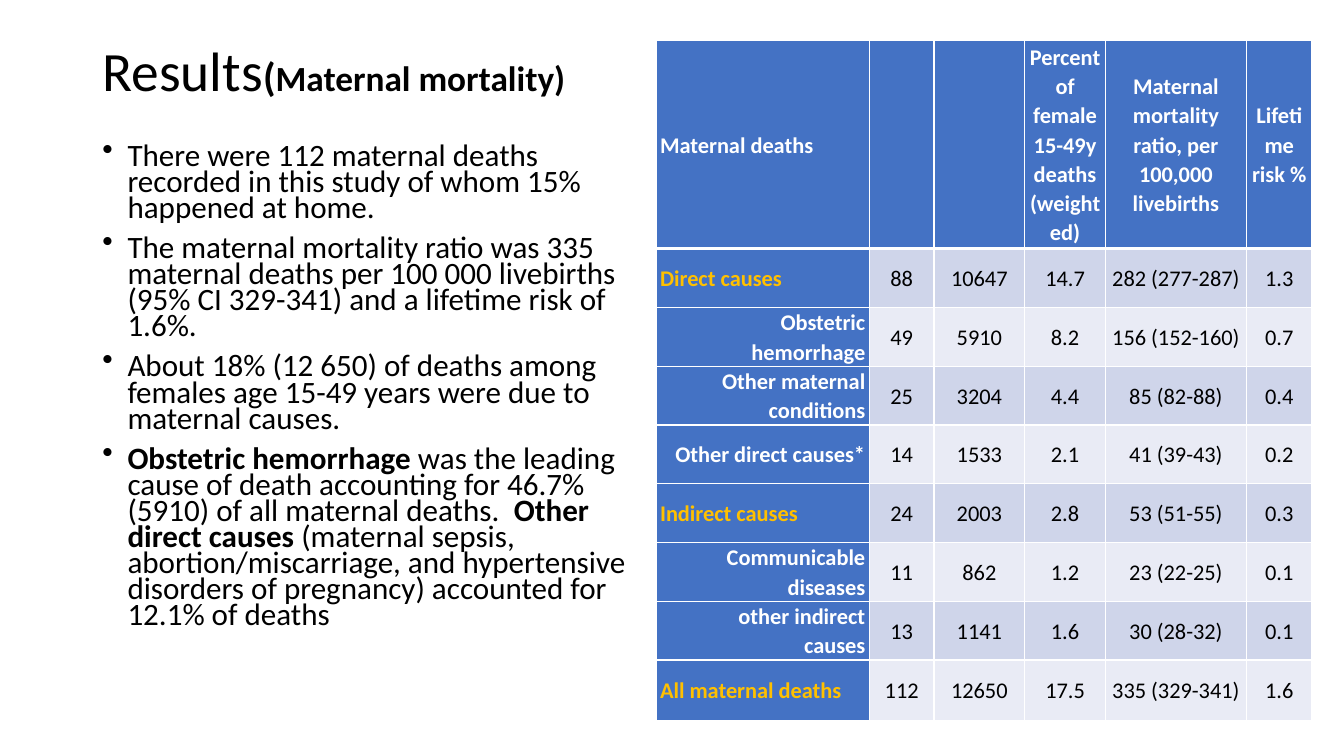
import dataclasses

import lxml.etree
import pptx
import pptx.dml.color
import pptx.enum.text
import pptx.oxml.ns
import pptx.util

ALIGN = pptx.enum.text.PP_ALIGN
MIDDLE = pptx.enum.text.MSO_ANCHOR.MIDDLE
qn = pptx.oxml.ns.qn


@dataclasses.dataclass(frozen=True)
class Theme:
    """Colours, type sizes and line widths of the deck."""
    font: str = "Calibri"
    ink: str = "000000"
    white: str = "FFFFFF"
    header: str = "4472C4"
    accent: str = "FFC000"
    bands: tuple = ("CFD5EA", "E9EBF5")
    title: float = 39.6
    bracket: float = 28.8
    subtitle: float = 25.2
    body: float = 22.2
    table: float = 16
    rule: float = 1
    header_rule: float = 3


class SlideBuilder:
    """Places elements on a slide by a grid of 160 columns and 90 rows."""

    def __init__(self, prs, theme):
        """Add a title-only slide."""
        self.theme = theme
        self.cell_w, self.cell_h = prs.slide_width / 160, prs.slide_height / 90
        self.s = prs.slides.add_slide(prs.slide_layouts[5])

    def box(self, col, row, cols, rows):
        """Turn grid units into left, top, width and height."""
        return (round(col * self.cell_w), round(row * self.cell_h),
                round(cols * self.cell_w), round(rows * self.cell_h))

    def style(self, font, size, color, bold=None):
        """Set the face, size, colour and weight of a font."""
        font.name, font.size, font.bold = self.theme.font, pptx.util.Pt(size), bold
        font.color.rgb = pptx.dml.color.RGBColor.from_string(color)

    def title(self, place, runs):
        """Fill the title placeholder with (text, size, bold) runs."""
        sp = self.s.shapes.title
        sp.left, sp.top, sp.width, sp.height = self.box(*place)
        tf = sp.text_frame
        tf.auto_size = pptx.enum.text.MSO_AUTO_SIZE.NONE
        tf.word_wrap, tf.vertical_anchor = True, MIDDLE
        p = tf.paragraphs[0]
        p.alignment, p.line_spacing = ALIGN.LEFT, 0.9
        for text, size, bold in runs:
            r = p.add_run()
            r.text = text
            self.style(r.font, size, self.theme.ink, bold)

    def bullets(self, place, items):
        """Add a bulleted list whose items are lists of (text, bold) runs."""
        tf = self.s.shapes.add_textbox(*self.box(*place)).text_frame
        tf.word_wrap = True
        for i, runs in enumerate(items):
            p = tf.add_paragraph() if i else tf.paragraphs[0]
            p.line_spacing, p.space_before = 0.7, pptx.util.Pt(10)
            self.style(p.font, self.theme.body, self.theme.ink)
            pPr = p._p.get_or_add_pPr()
            hang = pptx.util.Inches(0.25)
            pPr.set("marL", str(hang))
            pPr.set("indent", str(-hang))
            bullet = lxml.etree.Element(qn("a:buChar"), char="•")
            pPr.find(qn("a:defRPr")).addprevious(bullet)
            for text, bold in runs:
                r = p.add_run()
                r.text, r.font.bold = text, bold

    def table(self, col, row, widths, heights):
        """Add an unbanded table with the given column and row sizes."""
        place = self.box(col, row, sum(widths), sum(heights))
        tbl = self.s.shapes.add_table(len(heights), len(widths), *place).table
        tbl.horz_banding = False
        for column, width in zip(tbl.columns, widths):
            column.width = round(width * self.cell_w)
        for line, height in zip(tbl.rows, heights):
            line.height = round(height * self.cell_h)
        return tbl

    def cell(self, cell, text, fill, color, bold, align, indent=0, top=1, bottom=1):
        """Fill, border and write one table cell."""
        tcPr = cell._tc.get_or_add_tcPr()
        for side, width in zip("LRTB", (self.theme.rule, self.theme.rule, top, bottom)):
            ln = lxml.etree.SubElement(tcPr, qn(f"a:ln{side}"), w=str(pptx.util.Pt(width)))
            solid = lxml.etree.SubElement(ln, qn("a:solidFill"))
            lxml.etree.SubElement(solid, qn("a:srgbClr"), val=self.theme.white)
        cell.fill.solid()
        cell.fill.fore_color.rgb = pptx.dml.color.RGBColor.from_string(fill)
        cell.vertical_anchor = MIDDLE
        cell.margin_left = cell.margin_right = pptx.util.Inches(0.04)
        cell.margin_top = cell.margin_bottom = 0
        p = cell.text_frame.paragraphs[0]
        p.alignment, p.line_spacing = align, 1.07
        if indent:
            p._p.get_or_add_pPr().set("indent", str(pptx.util.Inches(indent)))
        self.style(p.font, self.theme.table, color, bold)
        if text:
            r = p.add_run()
            r.text = text
            self.style(r.font, self.theme.table, color, bold)


HEADINGS = ["Maternal deaths", "", "", "Percent of female 15-49y deaths (weighted)",
            "Maternal mortality ratio, per 100,000 livebirths", "Lifetime risk %"]
CAUSES = [
    ("Direct causes", 0, "88", "10647", "14.7", "282 (277-287)", "1.3"),
    ("Obstetric hemorrhage", 0.28, "49", "5910", "8.2", "156 (152-160)", "0.7"),
    ("Other maternal conditions", 0.28, "25", "3204", "4.4", "85 (82-88)", "0.4"),
    ("Other direct causes*", 0.14, "14", "1533", "2.1", "41 (39-43)", "0.2"),
    ("Indirect causes", 0, "24", "2003", "2.8", "53 (51-55)", "0.3"),
    ("Communicable diseases", 0.28, "11\u00a0".strip(), "862", "1.2", "23 (22-25)", "0.1"),
    ("other indirect causes", 0.28, "13", "1141", "1.6", "30 (28-32)", "0.1"),
    ("All maternal deaths", 0, "112", "12650", "17.5", "335 (329-341)", "1.6"),
]
FINDINGS = [
    [("There were 112 maternal deaths recorded in this study of whom 15% happened at home.", False)],
    [("The maternal mortality ratio was 335 maternal deaths per 100 000 livebirths "
      "(95% CI 329-341) and a lifetime risk of 1.6%.", False)],
    [("About 18% (12 650) of deaths among females age 15-49 years were due to maternal causes.", False)],
    [("Obstetric hemorrhage ", True),
     ("was the leading cause of death accounting for 46.7% (5910) of all maternal deaths.  ", False),
     ("Other direct causes ", True),
     ("(maternal sepsis, abortion/miscarriage, and hypertensive disorders of pregnancy) "
      "accounted for 12.1% of deaths", False)],
]


def main():
    """Build the maternal mortality slide."""
    prs = pptx.Presentation()
    prs.slide_width, prs.slide_height = pptx.util.Inches(13.33), pptx.util.Inches(7.5)
    theme = Theme()
    slide = SlideBuilder(prs, theme)
    slide.title((11, 4.8, 138, 7.8), [("Results", theme.title, False), ("(", theme.bracket, True),
                                      ("Maternal mortality)", theme.subtitle, True)])
    slide.bullets((11, 16.7, 68, 64.3), FINDINGS)

    tbl = slide.table(78.1, 4.8, [25.4, 7.7, 10.8, 9.6, 16.8, 7.8], [24.8] + [7] * 7 + [7.2])
    for c, heading in enumerate(HEADINGS):
        slide.cell(tbl.cell(0, c), heading, theme.header, theme.white, True,
                   ALIGN.CENTER if c else ALIGN.LEFT, bottom=theme.header_rule)
    for n, (cause, indent, *values) in enumerate(CAUSES, 1):
        top = theme.header_rule if n == 1 else theme.rule
        slide.cell(tbl.cell(n, 0), cause, theme.header, theme.white if indent else theme.accent,
                   True, ALIGN.RIGHT if indent else ALIGN.LEFT, indent, top)
        for c, value in enumerate(values, 1):
            slide.cell(tbl.cell(n, c), value, theme.bands[(n - 1) % 2], theme.ink,
                       False, ALIGN.CENTER, top=top)
    prs.save("out.pptx")


if __name__ == "__main__":
    main()
